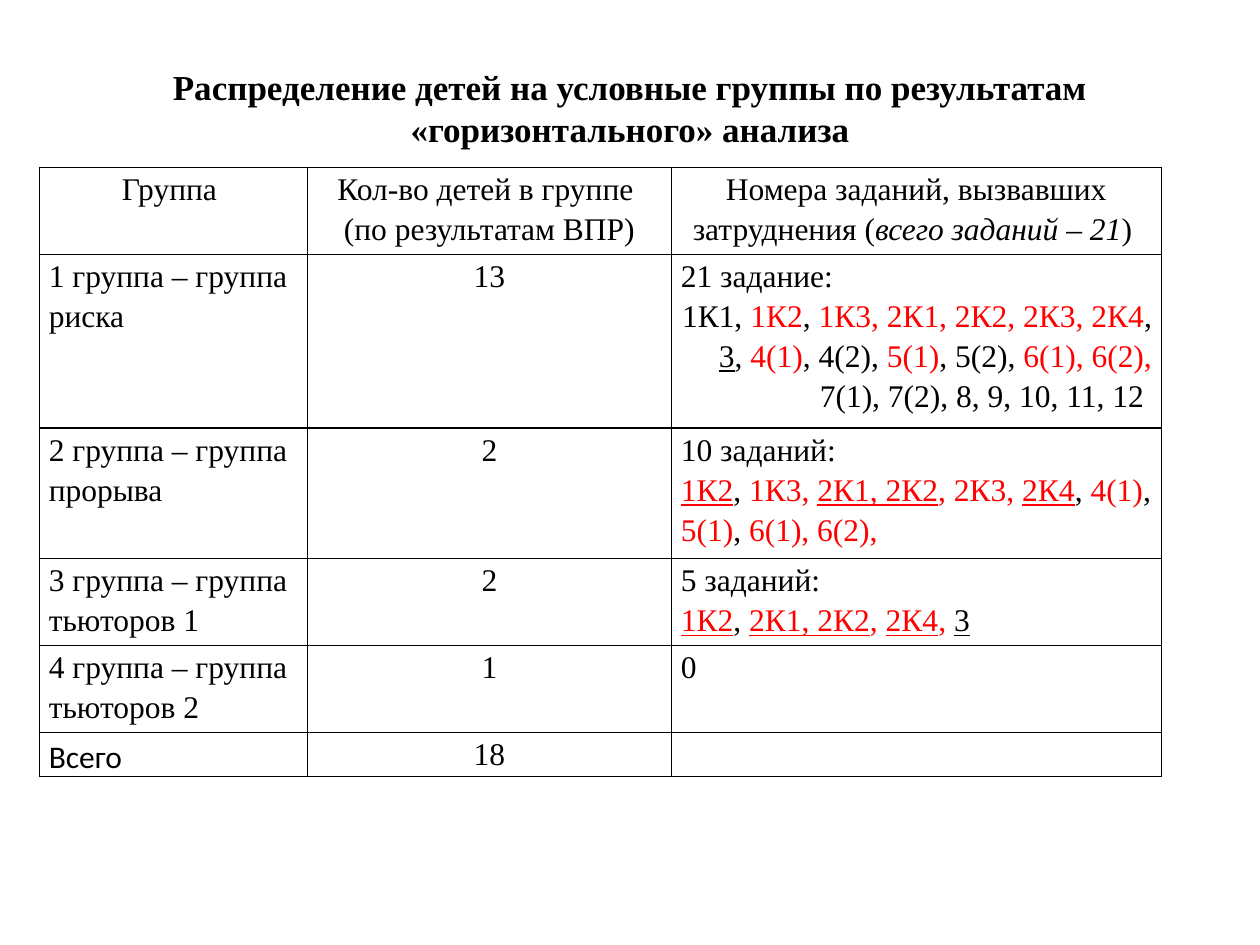
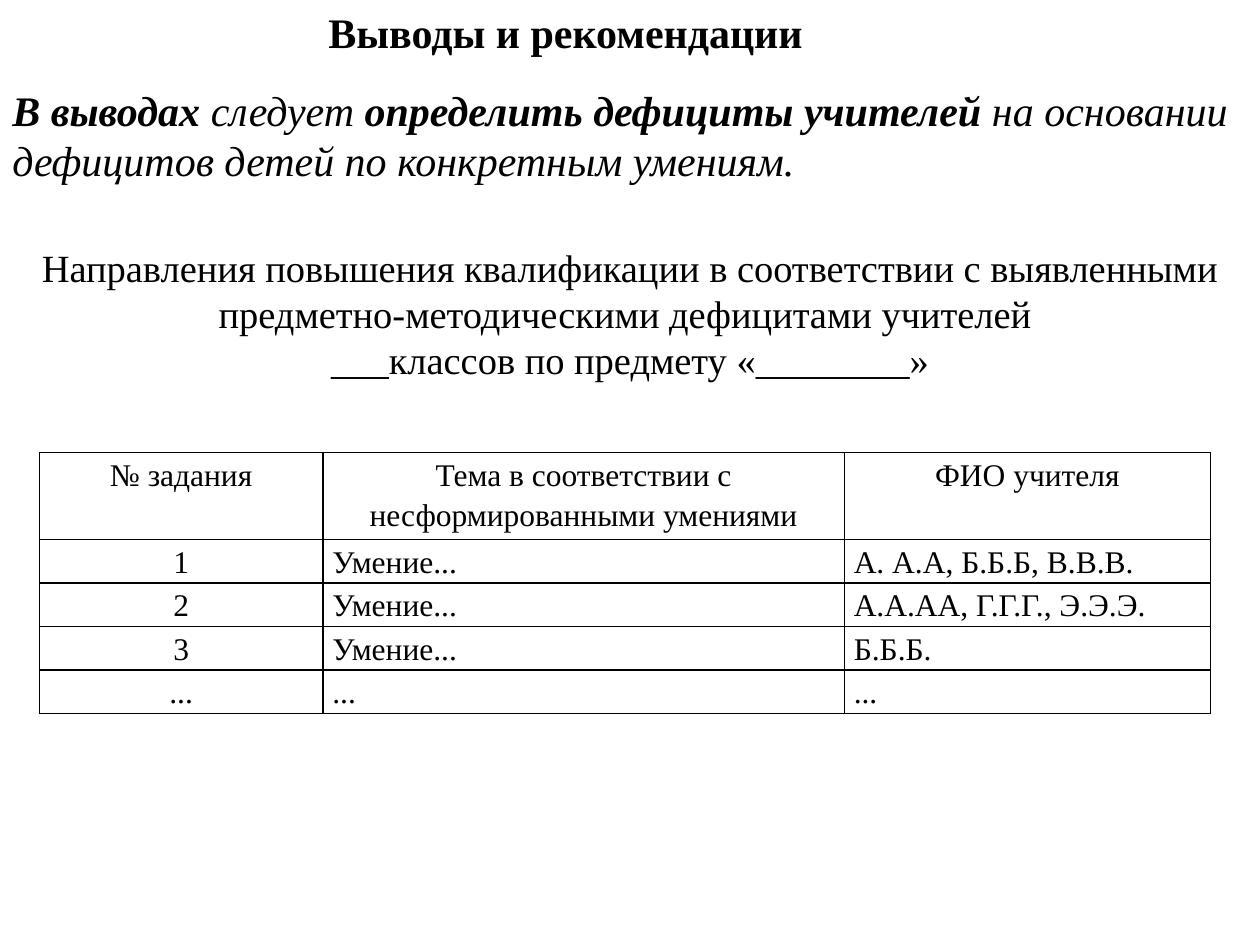
"""Build two slides on the analysis of test results and teacher training."""
from pptx import Presentation
from pptx.dml.color import RGBColor
from pptx.enum.text import MSO_ANCHOR as Anchor, MSO_AUTO_SIZE as Fit, PP_ALIGN as Align
from pptx.oxml import parse_xml
from pptx.oxml.ns import nsdecls
from pptx.util import Pt

FONT = "Times New Roman"
BLACK, RED = "000000", "FF0000"
SIDES = {"l": Align.LEFT, "c": Align.CENTER, "r": Align.RIGHT}


def write(frame, paras, size, gap=None):
    """Fill a frame with (side, runs); run marks are b, i, u, r for red, s for sans."""
    for num, (side, runs) in enumerate(paras):
        para = frame.add_paragraph() if num else frame.paragraphs[0]
        para.alignment = SIDES[side]
        if gap:
            para.line_spacing = gap
        for text, marks in runs:
            run = para.add_run()
            run.text = text
            font = run.font
            font.name = "Calibri" if "s" in marks else FONT
            font.size = Pt(size)
            font.bold, font.italic, font.underline = (m in marks for m in "biu")
            font.color.rgb = RGBColor.from_string(RED if "r" in marks else BLACK)


def draw(slide, left, top, widths, heights, rows):
    """Add a plain ruled table; a cell is a list of paragraphs."""
    frame = slide.shapes.add_table(len(heights), len(widths), Pt(left), Pt(top),
                                   Pt(sum(widths)), Pt(sum(heights)))
    table = frame.table
    table.first_row = table.horz_banding = False
    for col, width in zip(table.columns, widths):
        col.width = Pt(width)
    for line, height, row in zip(table.rows, heights, rows):
        line.height = Pt(height)
        for cell, paras in zip(line.cells, row):
            cell.margin_left = cell.margin_right = Pt(5.4)
            cell.margin_top = cell.margin_bottom = Pt(0)
            props = cell._tc.get_or_add_tcPr()
            for edge in "LRTB":
                props.append(parse_xml(
                    f'<a:ln{edge} {nsdecls("a")} w="12700"><a:solidFill>'
                    f'<a:srgbClr val="{BLACK}"/></a:solidFill></a:ln{edge}>'))
            cell.fill.background()
            write(cell.text_frame, paras, 18, 1.15)


deck = Presentation()
deck.slide_width, deck.slide_height = Pt(720), Pt(540)

titles = [
    ("Распределение детей на условные группы по результатам «горизонтального» анализа",
     20, (56, 34, 608, 55.5), Anchor.TOP),
    ("Выводы и рекомендации ", 24, (180, 0, 292.5, 36.5), Anchor.MIDDLE),
]
slides = []
for text, size, place, anchor in titles:
    slide = deck.slides.add_slide(deck.slide_layouts[5])
    title = slide.shapes.title
    title.left, title.top, title.width, title.height = map(Pt, place)
    frame = title.text_frame
    frame.auto_size, frame.vertical_anchor = Fit.NONE, anchor
    write(frame, [("c", [(text, "b")])], size)
    slides.append(slide)
groups, advice = slides

risk = [("1К1, ", ""), ("1К2", "r"), (", ", ""), ("1К3, 2К1, 2К2, 2К3, 2К4", "r"),
        (", ", ""), ("3", "u"), (", ", ""), ("4(1)", "r"), (", 4(2), ", ""),
        ("5(1)", "r"), (", 5(2), ", ""), ("6(1), 6(2), ", "r"),
        ("7(1), 7(2), 8, 9, 10, 11, 12 ", "")]
leap = [("1К2", "ru"), (", ", ""), ("1К3, ", "r"), ("2К1, 2К2", "ru"), (", 2К3, ", "r"),
        ("2К4", "ru"), (", ", ""), ("4(1)", "r"), (", ", ""), ("5(1)", "r"), (", ", ""),
        ("6(1), 6(2),", "r")]
tutor = [("1К2", "ru"), (", ", ""), ("2К1, 2К2", "ru"), (", ", "r"), ("2К4", "ru"),
         (", ", "r"), ("3", "u")]
heads = [
    [("c", [("Группа ", "")])],
    [("c", [("Кол-во детей в группе ", "")]), ("c", [("(по результатам ВПР)", "")])],
    [("c", [("Номера заданий, вызвавших затруднения (", ""),
            ("всего заданий – 21", "i"), (") ", "")])],
]
body = [
    ("1 группа – группа риска", "", "13", [("l", [("21 задание:", "")]), ("r", risk)]),
    ("2 группа – группа прорыва", "", "2", [("l", [("10 заданий:", "")]), ("l", leap)]),
    ("3 группа – группа тьюторов 1", "", "2", [("l", [("5 заданий:", "")]), ("l", tutor)]),
    ("4 группа – группа тьюторов 2", "", "1", [("l", [("0", "")])]),
    ("Всего", "s", "18", []),
]
rows = [heads] + [[[("l", [(name, mark)])], [("c", [(count, "")])], tasks]
                  for name, mark, count, tasks in body]
draw(groups, 22.5, 95.6, [153.2, 208, 280], [49.7, 99.4, 74.5, 49.7, 49.7, 24.85], rows)

notes = [
    (44.5, 65.5, 24, Anchor.TOP, [
        ("l", [("В выводах ", "bi"), ("следует ", "i"),
               ("определить дефициты учителей ", "bi"),
               ("на основании дефицитов детей по конкретным умениям.", "i")])]),
    (135.5, 87, 22, Anchor.MIDDLE, [
        ("c", [("Направления повышения квалификации в соответствии с выявленными "
                "предметно-методическими дефицитами учителей ", "")]),
        ("c", [("___классов по предмету «________»", "")])]),
]
for top, height, size, anchor, paras in notes:
    frame = advice.shapes.add_textbox(Pt(0), Pt(top), Pt(720), Pt(height)).text_frame
    frame.word_wrap, frame.vertical_anchor = True, anchor
    write(frame, paras, size)

heads = ["№ задания", "Тема в соответствии с несформированными умениями", "ФИО учителя"]
body = [
    ("1", "Умение...", "А. А.А, Б.Б.Б, В.В.В."),
    ("2", "Умение...", "А.А.АА, Г.Г.Г., Э.Э.Э."),
    ("3", "Умение...", "Б.Б.Б."),
    ("...", "...", "..."),
]
rows = [[[("c", [(text, "")])] for text in heads]]
rows += [[[(side, [(text, "")])] for side, text in zip("cll", row)] for row in body]
draw(advice, 22.5, 258.7, [162, 298, 209.3], [49.7] + [24.85] * 4, rows)

deck.save("out.pptx")
